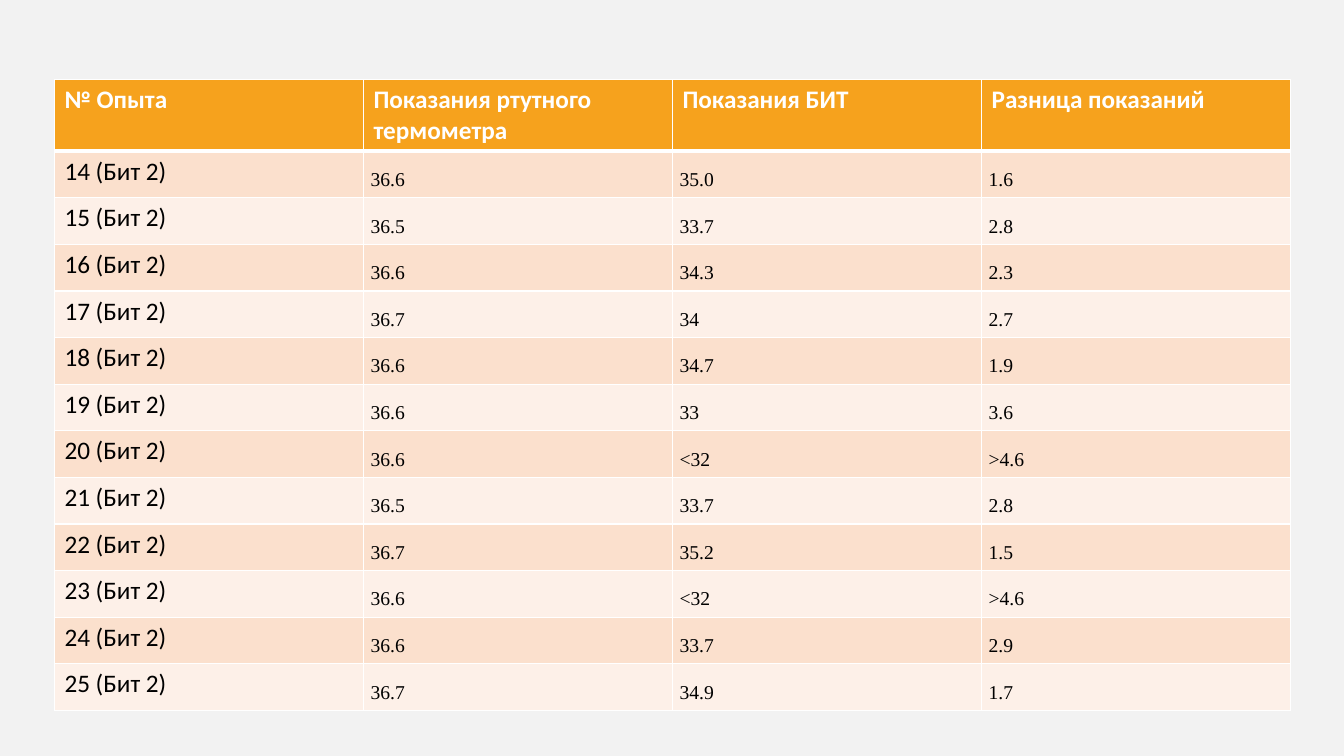
from dataclasses import dataclass

from lxml import etree
from pptx import Presentation
from pptx.dml.color import RGBColor
from pptx.enum.text import PP_ALIGN
from pptx.oxml.ns import qn
from pptx.util import Inches, Pt

JUSTIFY = PP_ALIGN.JUSTIFY
LEFT = PP_ALIGN.LEFT


@dataclass(frozen=True)
class Theme:
    background: str = "F2F2F2"
    header_fill: str = "F6A21D"
    band_fills: tuple = ("FBE0CD", "FDF0E8")
    header_text: str = "FFFFFF"
    body_text: str = "000000"
    border: str = "FFFFFF"
    label_font: str = "Calibri"
    value_font: str = "Times New Roman"
    label_size: int = 18
    value_size: int = 14
    thin_line: int = 1
    thick_line: int = 3


THEME = Theme()

HEADERS = ("№ Опыта", "Показания ртутного термометра", "Показания БИТ", "Разница показаний")
FIRST_TRIAL = 14
READINGS = (
    ("36.6", "35.0", "1.6"),
    ("36.5", "33.7", "2.8"),
    ("36.6", "34.3", "2.3"),
    ("36.7", "34", "2.7"),
    ("36.6", "34.7", "1.9"),
    ("36.6", "33", "3.6"),
    ("36.6", "<32", ">4.6"),
    ("36.5", "33.7", "2.8"),
    ("36.7", "35.2", "1.5"),
    ("36.6", "<32", ">4.6"),
    ("36.6", "33.7", "2.9"),
    ("36.7", "34.9", "1.7"),
)


def set_borders(cell, top, bottom):
    """Draw all four cell borders; top and bottom widths are in points."""
    properties = cell._tc.get_or_add_tcPr()
    widths = {"lnL": THEME.thin_line, "lnR": THEME.thin_line, "lnT": top, "lnB": bottom}
    for side, width in widths.items():
        line = etree.SubElement(properties, qn(f"a:{side}"), w=str(Pt(width)))
        fill = etree.SubElement(line, qn("a:solidFill"))
        etree.SubElement(fill, qn("a:srgbClr"), val=THEME.border)


def fill_cell(cell, text, fill, color, font_name, size, bold=False):
    cell.fill.solid()
    cell.fill.fore_color.rgb = RGBColor.from_string(fill)
    cell.text_frame.text = text
    paragraph = cell.text_frame.paragraphs[0]
    paragraph.alignment = LEFT
    font = paragraph.runs[0].font
    font.name = font_name
    font.size = Pt(size)
    font.bold = bold
    font.color.rgb = RGBColor.from_string(color)


def format_value_cell(cell):
    cell.margin_left = cell.margin_right = Inches(0.07)
    cell.margin_top = cell.margin_bottom = Inches(0.07)
    paragraph = cell.text_frame.paragraphs[0]
    paragraph.alignment = JUSTIFY
    paragraph.line_spacing = 1.5


def add_readings_table(slide, left, top, width, header_height, row_height):
    row_count = len(READINGS) + 1
    height = header_height + row_height * len(READINGS)
    table = slide.shapes.add_table(row_count, len(HEADERS), left, top, width, height).table
    for column in table.columns:
        column.width = width // len(HEADERS)
    for row in table.rows:
        row.height = row_height
    table.rows[0].height = header_height

    # Header row
    for column, header in enumerate(HEADERS):
        cell = table.cell(0, column)
        set_borders(cell, THEME.thin_line, THEME.thick_line)
        fill_cell(cell, header, THEME.header_fill, THEME.header_text,
                  THEME.label_font, THEME.label_size, bold=True)

    # Banded rows: trial label, then its readings
    for index, readings in enumerate(READINGS):
        fill = THEME.band_fills[index % 2]
        top_line = THEME.thick_line if index == 0 else THEME.thin_line
        label = f"{FIRST_TRIAL + index} (Бит 2)"
        for column, text in enumerate((label, *readings)):
            cell = table.cell(index + 1, column)
            set_borders(cell, top_line, THEME.thin_line)
            if column == 0:
                fill_cell(cell, text, fill, THEME.body_text, THEME.label_font, THEME.label_size)
            else:
                fill_cell(cell, text, fill, THEME.body_text, THEME.value_font, THEME.value_size)
                format_value_cell(cell)


def main():
    presentation = Presentation()
    presentation.slide_width = Inches(13.33)
    presentation.slide_height = Inches(7.5)
    slide = presentation.slides.add_slide(presentation.slide_layouts[6])

    # Background
    slide.background.fill.solid()
    slide.background.fill.fore_color.rgb = RGBColor.from_string(THEME.background)

    # Thermometer comparison
    add_readings_table(slide, Inches(0.54), Inches(0.79), Inches(12.26),
                       header_height=Inches(0.7), row_height=Inches(0.46))

    presentation.save("out.pptx")


if __name__ == "__main__":
    main()
